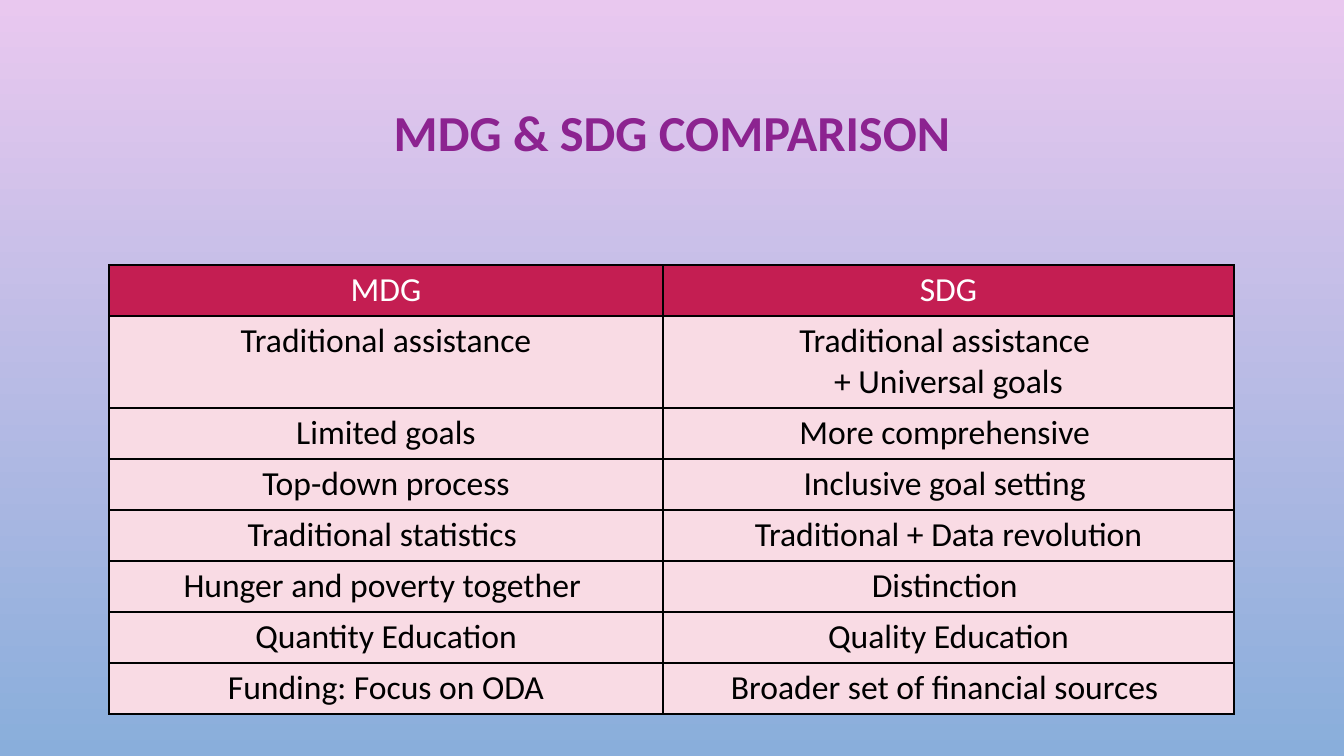
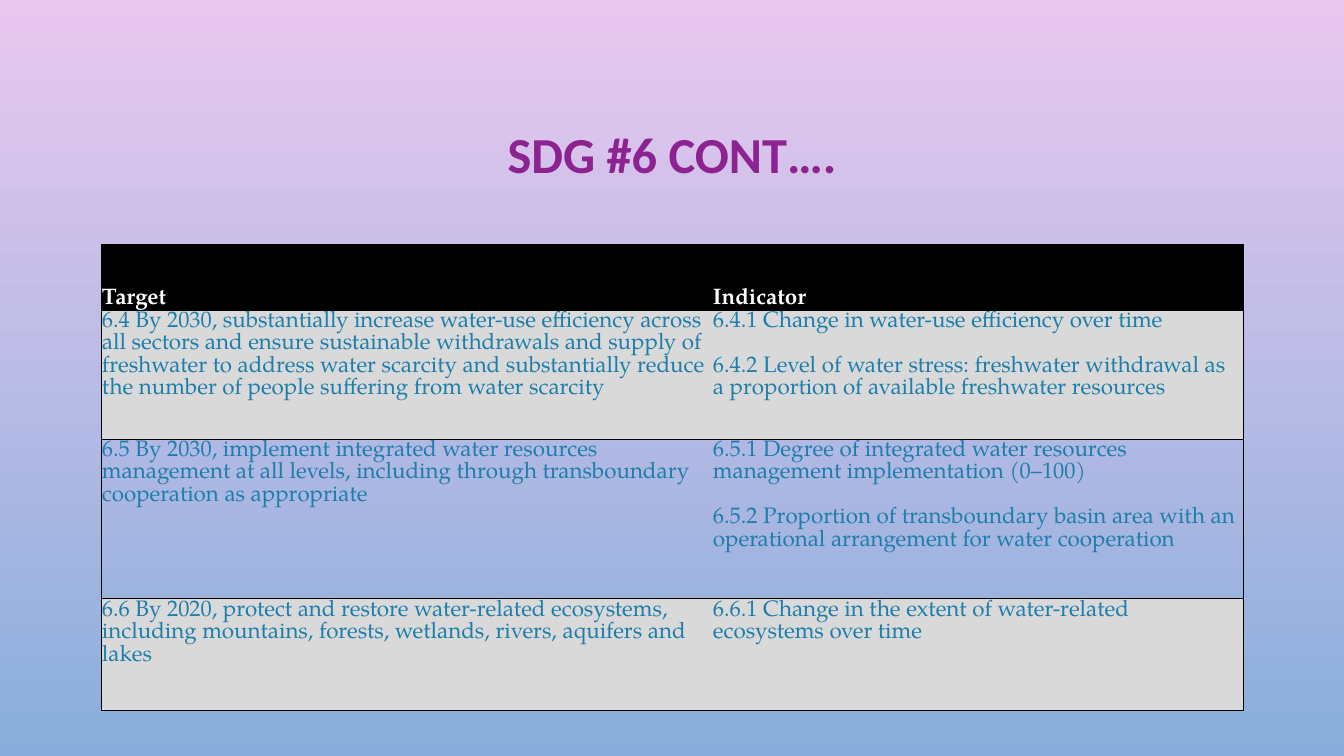
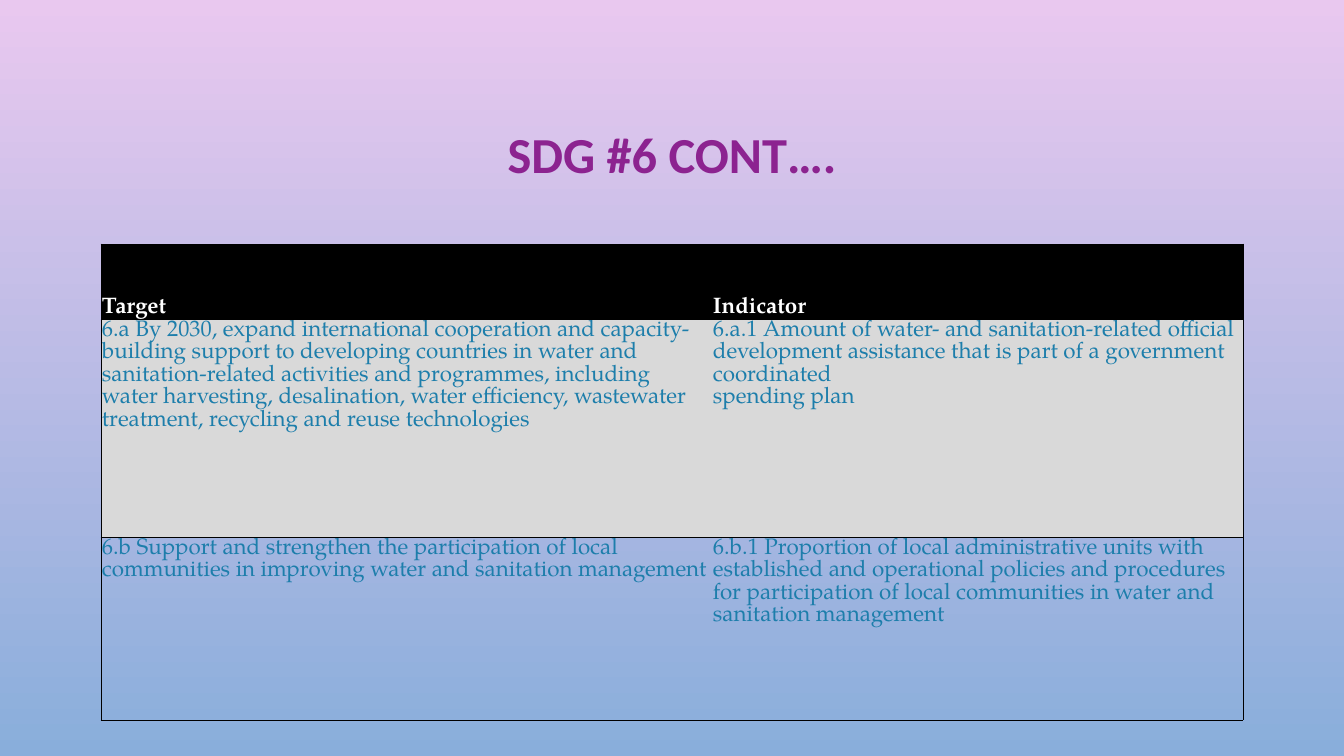
import pptx
import pptx.util
import pptx.dml.color
import pptx.enum.text
import pptx.oxml
import pptx.oxml.ns

EMU_PER_PX = 12192000 / 1344
COLORS = {
    "sky_top": "E9C8EF",
    "sky_bottom": "89AEDB",
    "title": "8C2390",
    "crimson": "C41E52",
    "blush": "F9DBE4",
    "black": "000000",
    "white": "FFFFFF",
    "gray": "D9D9D9",
    "teal": "1D7EAB",
}
ALIGN = pptx.enum.text.PP_ALIGN
ANCHOR = pptx.enum.text.MSO_ANCHOR

COMPARISON = [
    ("MDG", "SDG"),
    ("Traditional assistance", "Traditional assistance \n+ Universal goals"),
    ("Limited goals", "More comprehensive "),
    ("Top-down process", "Inclusive goal setting "),
    ("Traditional statistics ", "Traditional + Data revolution"),
    ("Hunger and poverty together ", "Distinction "),
    ("Quantity Education", "Quality Education"),
    ("Funding: Focus on ODA", "Broader set of financial sources "),
]
TARGET_HEADER = ("Target", "Indicator")
WATER_USE_TARGETS = [
    TARGET_HEADER,
    ("6.4 By 2030, substantially increase water-use efficiency across all sectors and ensure "
     "sustainable withdrawals and supply of freshwater to address water scarcity and "
     "substantially reduce the number of people suffering from water scarcity",
     "6.4.1 Change in water-use efficiency over time\n"
     "6.4.2 Level of water stress: freshwater withdrawal as a proportion of available "
     "freshwater resources"),
    ("6.5 By 2030, implement integrated water resources management at all levels, including "
     "through transboundary cooperation as appropriate",
     "6.5.1 Degree of integrated water resources management implementation (0–100)\n"
     "6.5.2 Proportion of transboundary basin area with an operational arrangement for "
     "water cooperation"),
    ("6.6 By 2020, protect and restore water-related ecosystems, including mountains, forests, "
     "wetlands, rivers, aquifers and lakes",
     "6.6.1 Change in the extent of water-related ecosystems over time"),
]
COOPERATION_TARGETS = [
    TARGET_HEADER,
    ("6.a By 2030, expand international cooperation and capacity-building support to developing "
     "countries in water and sanitation-related activities and programmes, including water "
     "harvesting, desalination, water efficiency, wastewater treatment, recycling and reuse "
     "technologies",
     "6.a.1 Amount of water- and sanitation-related official development assistance that is "
     "part of a government coordinated\nspending plan"),
    ("6.b Support and strengthen the participation of local communities in improving water and "
     "sanitation management",
     "6.b.1 Proportion of local administrative units with established and operational policies "
     "and procedures for participation of local communities in water and sanitation management"),
]


def px(value):
    return pptx.util.Emu(round(value * EMU_PER_PX))


def rgb(name):
    return pptx.dml.color.RGBColor.from_string(COLORS[name])


def style_font(font, name, size, color, bold=False):
    font.name = name
    font.size = pptx.util.Pt(size)
    font.color.rgb = rgb(color)
    font.bold = bold


def set_gradient_background(master):
    fill = master.background.fill
    fill.gradient()
    fill.gradient_angle = 270
    for stop, color in zip(fill.gradient_stops, ("sky_top", "sky_bottom")):
        stop.color.rgb = rgb(color)


def add_titled_slide(presentation, title, title_height):
    slide = presentation.slides.add_slide(presentation.slide_layouts[6])
    box = slide.shapes.add_textbox(px(101), px(69), px(1142), px(title_height))
    frame = box.text_frame
    frame.word_wrap = True
    frame.vertical_anchor = ANCHOR.MIDDLE
    paragraph = frame.paragraphs[0]
    paragraph.text = title
    paragraph.alignment = ALIGN.CENTER
    paragraph.line_spacing = 0.9
    style_font(paragraph.font, "Calibri", 36, "title", bold=True)
    return slide


def set_borders(cell, sides, width):
    """Draw the sides named in a string of L, R, T, B; the others get no line."""
    properties = cell._tc.get_or_add_tcPr()
    for index, side in enumerate("LRTB"):
        paint = "<a:noFill/>"
        if side in sides:
            paint = f'<a:solidFill><a:srgbClr val="{COLORS["black"]}"/></a:solidFill>'
        line = pptx.oxml.parse_xml(
            f'<a:ln{side} {pptx.oxml.ns.nsdecls("a")} w="{pptx.util.Pt(width)}">'
            f'{paint}</a:ln{side}>')
        properties.insert(index, line)


def fill_cell(cell, color):
    if color:
        cell.fill.solid()
        cell.fill.fore_color.rgb = rgb(color)
    else:
        cell.fill.background()


def add_grid(slide, left, top, widths, heights):
    frame = slide.shapes.add_table(len(heights), len(widths), px(left), px(top),
                                   px(sum(widths)), px(sum(heights)))
    table = frame.table
    for column, width in zip(table.columns, widths):
        column.width = px(width)
    for row, height in zip(table.rows, heights):
        row.height = px(height)
    return table


def table_cells(table, rows):
    """Write the texts and yield each cell with its row and column number."""
    for row_number, texts in enumerate(rows):
        for column_number, text in enumerate(texts):
            cell = table.cell(row_number, column_number)
            cell.text = text
            yield cell, row_number, column_number


def add_comparison_table(slide, rows):
    heights = [51, 92] + [51] * (len(rows) - 2)
    table = add_grid(slide, 109, 265, [554, 571], heights)
    for cell, row, _ in table_cells(table, rows):
        is_header = row == 0
        fill_cell(cell, "crimson" if is_header else "blush")
        set_borders(cell, "LRTB", 1)
        for paragraph in cell.text_frame.paragraphs:
            paragraph.alignment = ALIGN.CENTER
            style_font(paragraph.font, "Calibri", 24, "white" if is_header else "black")


def add_target_table(slide, rows, heights, border_width, paragraph_gap=0):
    table = add_grid(slide, 101, 244, [611, 531], heights)
    for cell, row, column in table_cells(table, rows):
        is_header = row == 0
        cell.margin_left = cell.margin_right = cell.margin_top = px(1)
        cell.margin_bottom = 0
        cell.vertical_anchor = ANCHOR.BOTTOM if is_header else ANCHOR.TOP
        fill_cell(cell, "black" if is_header else "gray" if row % 2 else None)
        set_borders(cell, "RTB" if column else "LTB", border_width)
        for number, paragraph in enumerate(cell.text_frame.paragraphs):
            if number and paragraph_gap:
                paragraph.space_before = pptx.util.Pt(paragraph_gap)
            style_font(paragraph.font, "TeX Gyre Pagella", 16,
                       "white" if is_header else "teal", bold=is_header)


def main():
    presentation = pptx.Presentation()
    presentation.slide_width = px(1344)
    presentation.slide_height = px(756)
    set_gradient_background(presentation.slide_master)

    slide = add_titled_slide(presentation, "MDG & SDG COMPARISON", 132)
    add_comparison_table(slide, COMPARISON)

    slide = add_titled_slide(presentation, "SDG #6 CONT….", 176)
    add_target_table(slide, WATER_USE_TARGETS, [66, 129, 160, 112], 0.75, paragraph_gap=16)

    slide = add_titled_slide(presentation, "SDG #6 CONT….", 176)
    add_target_table(slide, COOPERATION_TARGETS, [75, 218, 183], 0.5)

    presentation.save("out.pptx")


if __name__ == "__main__":
    main()
